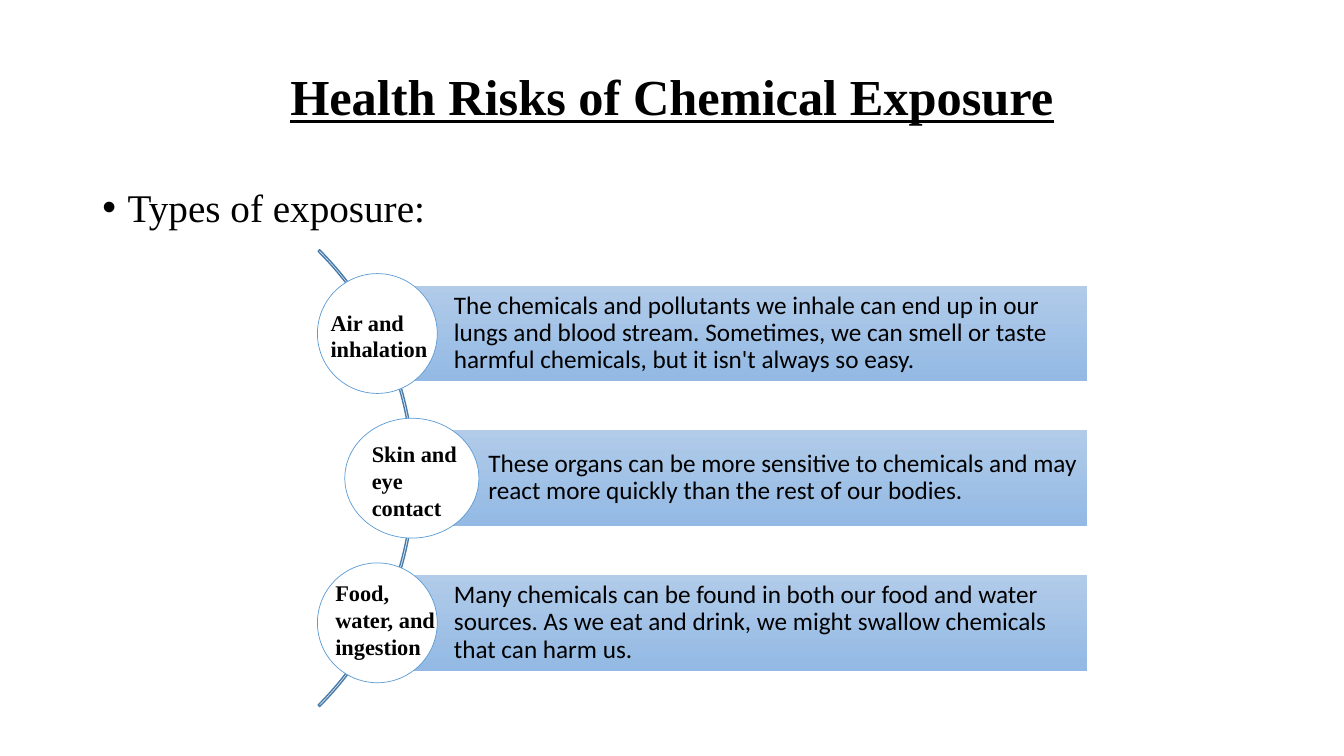
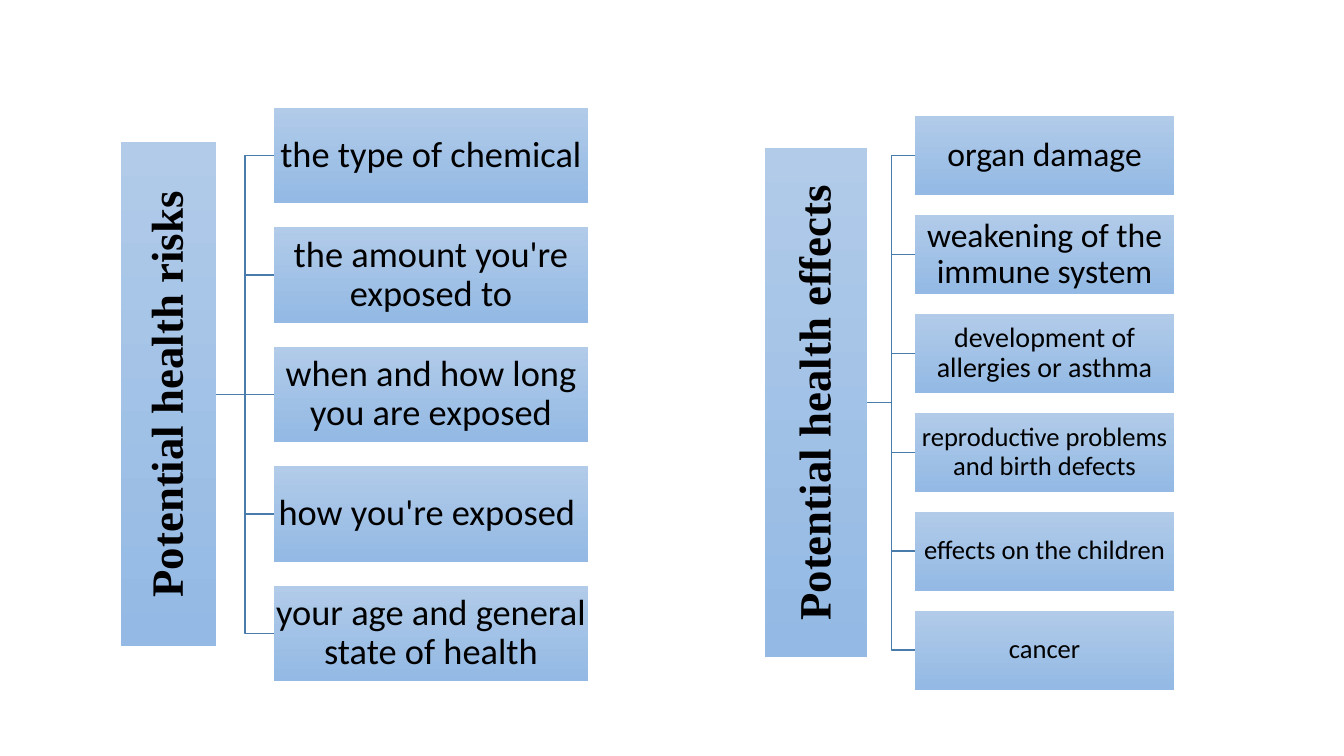
from dataclasses import dataclass

from pptx import Presentation
from pptx.dml.color import RGBColor as Rgb
from pptx.enum.shapes import MSO_CONNECTOR as Link, MSO_SHAPE as Kind
from pptx.enum.text import MSO_ANCHOR as Anchor, PP_ALIGN as Align
from pptx.oxml import parse_xml
from pptx.oxml.ns import nsdecls, qn
from pptx.util import Cm, Pt


@dataclass(frozen=True)
class Theme:
    """Colours, fonts and type sizes shared by the slides."""
    ink: Rgb = Rgb.from_string("000000")
    paper: Rgb = Rgb.from_string("FFFFFF")
    light: Rgb = Rgb.from_string("B1CBE9")
    deep: Rgb = Rgb.from_string("93B9E4")
    rule: Rgb = Rgb.from_string("497CAB")
    ring: Rgb = Rgb.from_string("5B9BD5")
    serif: str = "Times New Roman"
    sans: str = "Calibri"
    title: int = 36
    head: int = 32
    lead: int = 28
    body: int = 18
    label: int = 16


THEME = Theme()

ROUTES = [
    ("Air and inhalation", (0.08, 0.76, 3.45), 8.0, 3.02,
     "The chemicals and pollutants we inhale can end up in our lungs and blood stream. "
     "Sometimes, we can smell or taste harmful chemicals, but it isn't always so easy."),
    ("Skin and eye contact", (0.43, 0.43, 2.97), 8.69, 3.38,
     "These organs can be more sensitive to chemicals and may react more quickly "
     "than the rest of our bodies."),
    ("Food, water, and ingestion", (0.2, 0.28, 3.33), 8.0, 3.02,
     "Many chemicals can be found in both our food and water sources. "
     "As we eat and drink, we might swallow chemicals that can harm us."),
]

RISKS = [
    ("the type of chemical", 26),
    ("the amount you're exposed to", 26),
    ("when and how long you are exposed", 26),
    ("how you're exposed ", 26),
    ("your age and general state of health", 26),
]

EFFECTS = [
    ("organ damage", 24),
    ("weakening of the immune system", 24),
    ("development of allergies or asthma", 20),
    ("reproductive problems and birth defects", 19),
    ("effects on the children", 19),
    ("cancer", 19),
]


def place(shape, box):
    """Move a shape to a box given in centimetres."""
    shape.left, shape.top, shape.width, shape.height = map(Cm, box)


def write(shape, text, size, font, bold=False, align=Align.LEFT, space=0.9,
          anchor=Anchor.MIDDLE, pads=None):
    """Set the text of a shape and format its run."""
    frame = shape.text_frame
    frame.text = text
    frame.word_wrap = True
    frame.vertical_anchor = anchor
    if pads:
        (frame.margin_left, frame.margin_top,
         frame.margin_right, frame.margin_bottom) = map(Cm, pads)
    par = frame.paragraphs[0]
    par.alignment = align
    par.line_spacing = space
    face = par.runs[0].font
    face.name, face.size, face.bold = font, Pt(size), bold
    face.color.rgb = THEME.ink
    return par


def add_form(slide, kind, box):
    """Add a preset shape without a shadow."""
    form = slide.shapes.add_shape(kind, *map(Cm, box))
    form.shadow.inherit = False
    return form


def add_bar(slide, box):
    """Add a borderless bar that shades downwards."""
    bar = add_form(slide, Kind.RECTANGLE, box)
    bar.fill.gradient()
    bar.fill.gradient_angle = 270
    for stop, tint in zip(bar.fill.gradient_stops, (THEME.light, THEME.deep)):
        stop.color.rgb = tint
    bar.line.fill.background()
    return bar


def add_note(slide, box, text, size, **style):
    """Add a text box in the serif face."""
    note = slide.shapes.add_textbox(*map(Cm, box))
    return write(note, text, size, THEME.serif, anchor=Anchor.TOP, **style)


def add_title(slide, box, text):
    """Place and style the title placeholder."""
    title = slide.shapes.title
    place(title, box)
    par = write(title, text, THEME.title, THEME.serif, bold=True, align=Align.CENTER)
    par.runs[0].font.underline = True


def add_lead(slide, box, text):
    """Add a bulleted opening line."""
    props = add_note(slide, box, text, THEME.lead)._p.get_or_add_pPr()
    props.set("marL", str(Cm(0.64)))
    props.set("indent", str(-Cm(0.64)))
    for tag, key, value in (("buFont", "typeface", "Arial"), ("buChar", "char", "•")):
        props.append(parse_xml(f'<a:{tag} {nsdecls("a")} {key}="{value}"/>'))


def add_arc(slide, box):
    """Add the thin arc that bulges to the right."""
    arc = add_form(slide, Kind.BLOCK_ARC, box)
    for i, value in enumerate((189, 27, 0.0034)):
        arc.adjustments[i] = value
    arc.fill.background()
    arc.line.color.rgb = THEME.rule
    arc.line.width = Pt(1)


def add_route(slide, box, disc, route):
    """Add one bar with the round label over its left end."""
    name, (dx, dy, wide), left, span, text = route
    x, y, w, h = box
    mid = left + span / 2
    bar = add_bar(slide, (mid, y, x + w - mid, h))
    write(bar, text, THEME.body, THEME.sans, pads=(1.93, 0.13, 0.13, 0.13))
    top = y + (h - disc) / 2
    ring = add_form(slide, Kind.OVAL, (left, top, span, disc))
    ring.fill.solid()
    ring.fill.fore_color.rgb = THEME.paper
    ring.line.color.rgb = THEME.ring
    ring.line.width = Pt(0.5)
    add_note(slide, (left + dx, top + dy, wide, 2.3), name, THEME.label,
             bold=True, space=1.0)


def add_routes(slide, box, routes):
    """Stack the routes in a box along an arc."""
    x, y, w, h = box
    tall, disc, arc = 2.41, 3.02, 16.28
    step = (h - tall) / (len(routes) - 1)
    add_arc(slide, (x - 13.84, y + (h - arc) / 2, arc, arc))
    for i, route in enumerate(routes):
        add_route(slide, (x, y + i * step, w, tall), disc, route)


def add_link(slide, start, end, kind):
    """Join the right side of one shape to the left side of another."""
    link = slide.shapes.add_connector(kind, 0, 0, 0, 0)
    link.begin_connect(start, 3)
    link.end_connect(end, 1)
    link.line.color.rgb = THEME.rule
    link.line.width = Pt(1)
    link._element.spPr.append(parse_xml(f'<a:effectLst {nsdecls("a")}/>'))


def add_tree(slide, box, head, gap, name, items):
    """Fill a box with an upright heading linked to a column of items."""
    x, y, w, h = box
    wide, tall = head
    count = len(items)
    cell = h / (count + (count - 1) / 4)
    style = dict(align=Align.CENTER, pads=(0.04,) * 4)
    root = add_bar(slide, (x, y + (h - tall) / 2, wide, tall))
    write(root, name, THEME.head, THEME.serif, bold=True, **style)
    root.text_frame._txBody.find(qn("a:bodyPr")).set("vert", "vert270")
    left = x + wide + gap
    for i, (text, size) in enumerate(items):
        leaf = add_bar(slide, (left, y + i * cell * 1.25, x + w - left, cell))
        write(leaf, text, size, THEME.sans, **style)
        level = 2 * i == count - 1
        add_link(slide, root, leaf, Link.STRAIGHT if level else Link.ELBOW)


def make_types(deck):
    """Build the slide on types of exposure."""
    slide = deck.slides.add_slide(deck.slide_layouts[5])
    add_title(slide, (2.33, 0.71, 29.21, 3.58), "Health Risks of Chemical Exposure")
    add_lead(slide, (2.33, 4.62, 29.21, 1.5), "Types of exposure:")
    add_routes(slide, (8, 7.2, 19.4, 9.7), ROUTES)


def make_trees(deck):
    """Build the slide on risks and effects."""
    slide = deck.slides.add_slide(deck.slide_layouts[6])
    add_tree(slide, (3.04, 2.71, 11.78, 14.46), (2.41, 12.7), 1.46,
             "Potential health risks", RISKS)
    add_tree(slide, (19.27, 2.92, 10.32, 14.46), (2.59, 12.83), 1.2,
             "Potential health effects", EFFECTS)


def main():
    """Build and save the deck."""
    deck = Presentation()
    deck.slide_width, deck.slide_height = Cm(33.87), Cm(19.05)
    make_types(deck)
    make_trees(deck)
    deck.save("out.pptx")


if __name__ == "__main__":
    main()
